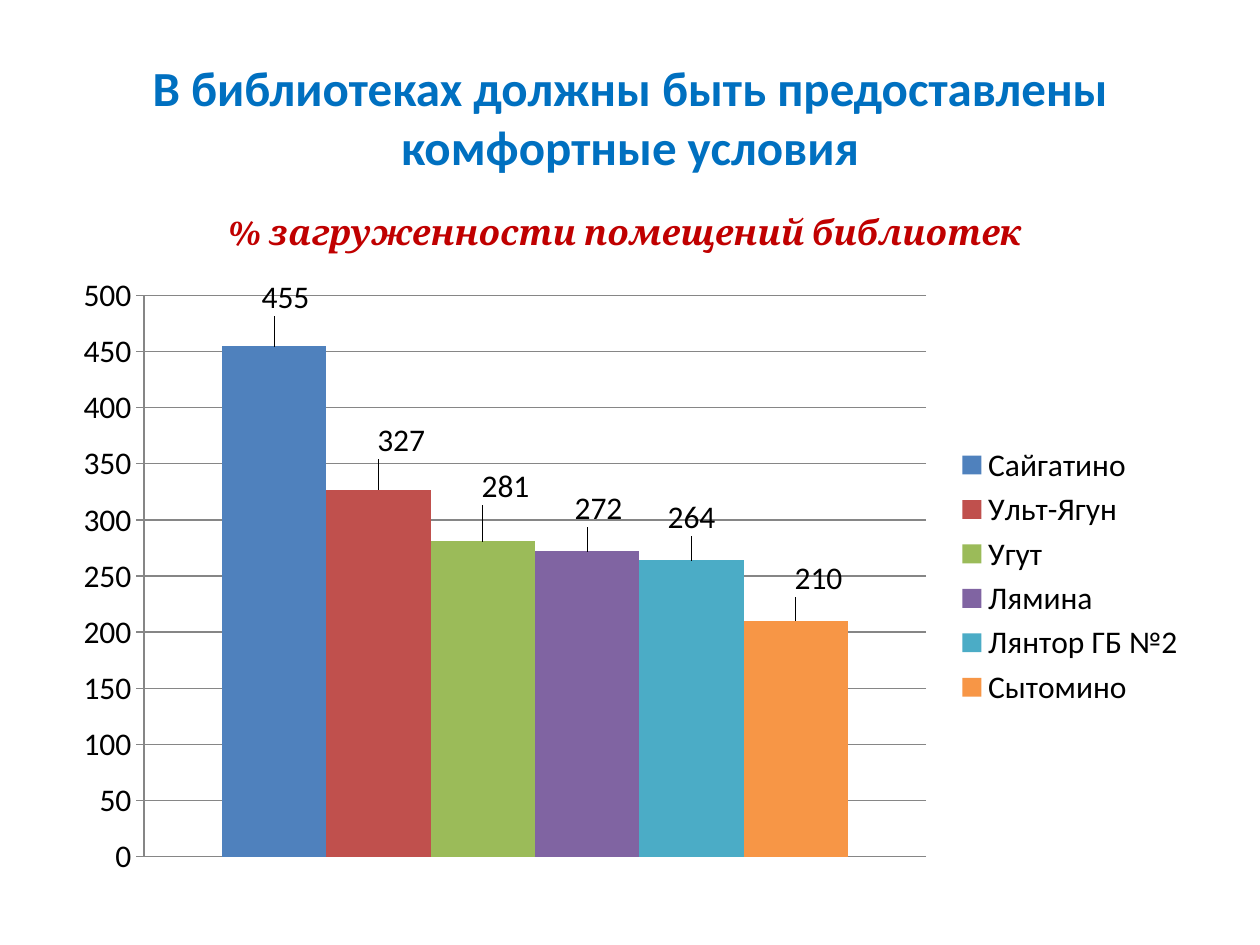
from lxml.etree import SubElement
from pptx import Presentation
from pptx.chart.data import CategoryChartData
from pptx.dml.color import RGBColor
from pptx.enum.chart import (XL_CHART_TYPE, XL_LABEL_POSITION,
                             XL_LEGEND_POSITION, XL_TICK_MARK)
from pptx.enum.text import MSO_ANCHOR, PP_ALIGN
from pptx.oxml.ns import qn
from pptx.util import Cm, Pt

BLUE = RGBColor(0x00, 0x70, 0xC0)
RED = RGBColor(0xC0, 0x00, 0x00)
BLACK = RGBColor(0x00, 0x00, 0x00)
GRAY = RGBColor(0x86, 0x86, 0x86)

# name, load in percent, bar colour, label shift as (x, y) share of the chart
ROOMS = [
    ("Сайгатино", 455, RGBColor(0x4F, 0x81, 0xBD), (0.01, -0.04)),
    ("Ульт-Ягун", 327, RGBColor(0xC0, 0x50, 0x4D), (0.02, -0.04)),
    ("Угут", 281, RGBColor(0x9B, 0xBB, 0x59), (0.02, -0.05)),
    ("Лямина", 272, RGBColor(0x80, 0x64, 0xA2), (0.01, -0.03)),
    ("Лянтор ГБ №2", 264, RGBColor(0x4B, 0xAC, 0xC6), (0, -0.03)),
    ("Сытомино", 210, RGBColor(0xF7, 0x96, 0x46), (0.02, -0.03)),
]


def add_line(slide, box, text, face, size, color, italic=False):
    """Place one bold centred text in the middle of the box."""
    frame = slide.shapes.add_textbox(*map(Cm, box)).text_frame
    frame.word_wrap = True
    frame.vertical_anchor = MSO_ANCHOR.MIDDLE
    frame.text = text
    para = frame.paragraphs[0]
    para.alignment = PP_ALIGN.CENTER
    font = para.runs[0].font
    font.name, font.size = face, Pt(size)
    font.bold, font.italic = True, italic
    font.color.rgb = color


def fill_layout(layout, **parts):
    """Write a manual layout, given as shares of the chart."""
    manual = SubElement(layout, qn("c:manualLayout"))
    for tag, val in parts.items():
        SubElement(manual, qn(f"c:{tag}")).set("val", str(val))


def set_plot(chart):
    area = chart.plots[0]._element.getparent()
    layout = area.find(qn("c:layout"))
    if layout is None:
        layout = SubElement(area, qn("c:layout"))
        area.insert(0, layout)
    fill_layout(layout, layoutTarget="inner", xMode="edge", yMode="edge",
                x=0.07, y=0.05, w=0.69, h=0.9)


def move_label(series, shift):
    series.points[0].data_label.position = XL_LABEL_POSITION.OUTSIDE_END
    label = series._element.find(f".//{qn('c:dLbl')}")
    layout = SubElement(label, qn("c:layout"))
    label.insert(1, layout)
    fill_layout(layout, x=shift[0], y=shift[1])


def style_axes(chart):
    chart.category_axis.visible = False
    axis = chart.value_axis
    axis.minimum_scale, axis.maximum_scale, axis.major_unit = 0, 500, 50
    axis.major_tick_mark = XL_TICK_MARK.OUTSIDE
    axis.has_major_gridlines = True
    for line in (axis.format.line, axis.major_gridlines.format.line):
        line.color.rgb = GRAY
        line.width = Pt(0.75)


def add_bars(slide, box):
    data = CategoryChartData()
    data.categories = ["1"]
    for name, load, *_ in ROOMS:
        data.add_series(name, [load])
    chart = slide.shapes.add_chart(
        XL_CHART_TYPE.COLUMN_CLUSTERED, *map(Cm, box), data).chart
    chart.has_title = False
    chart.font.name, chart.font.size = "Calibri", Pt(18)
    chart.font.color.rgb = BLACK
    chart.has_legend = True
    chart.legend.position = XL_LEGEND_POSITION.RIGHT
    chart.legend.include_in_layout = False
    style_axes(chart)
    set_plot(chart)
    plot = chart.plots[0]
    plot.gap_width, plot.overlap = 150, 0
    plot.vary_by_categories = False
    for series, (_, _, color, shift) in zip(plot.series, ROOMS):
        series.format.fill.solid()
        series.format.fill.fore_color.rgb = color
        series.data_labels.show_value = True
        move_label(series, shift)


def main():
    deck = Presentation()
    deck.slide_width, deck.slide_height = Cm(25.4), Cm(19.05)
    slide = deck.slides.add_slide(deck.slide_layouts[6])
    add_line(slide, (1.27, 0.76, 22.86, 3.18),
             "В библиотеках должны быть предоставлены комфортные условия",
             "Calibri", 28, BLUE)
    add_bars(slide, (1.3, 5.33, 22.86, 12.57))
    add_line(slide, (2.49, 4.11, 20.19, 1.11),
             "% загруженности помещений библиотек",
             "Cambria", 20, RED, italic=True)
    deck.save("out.pptx")


if __name__ == "__main__":
    main()
